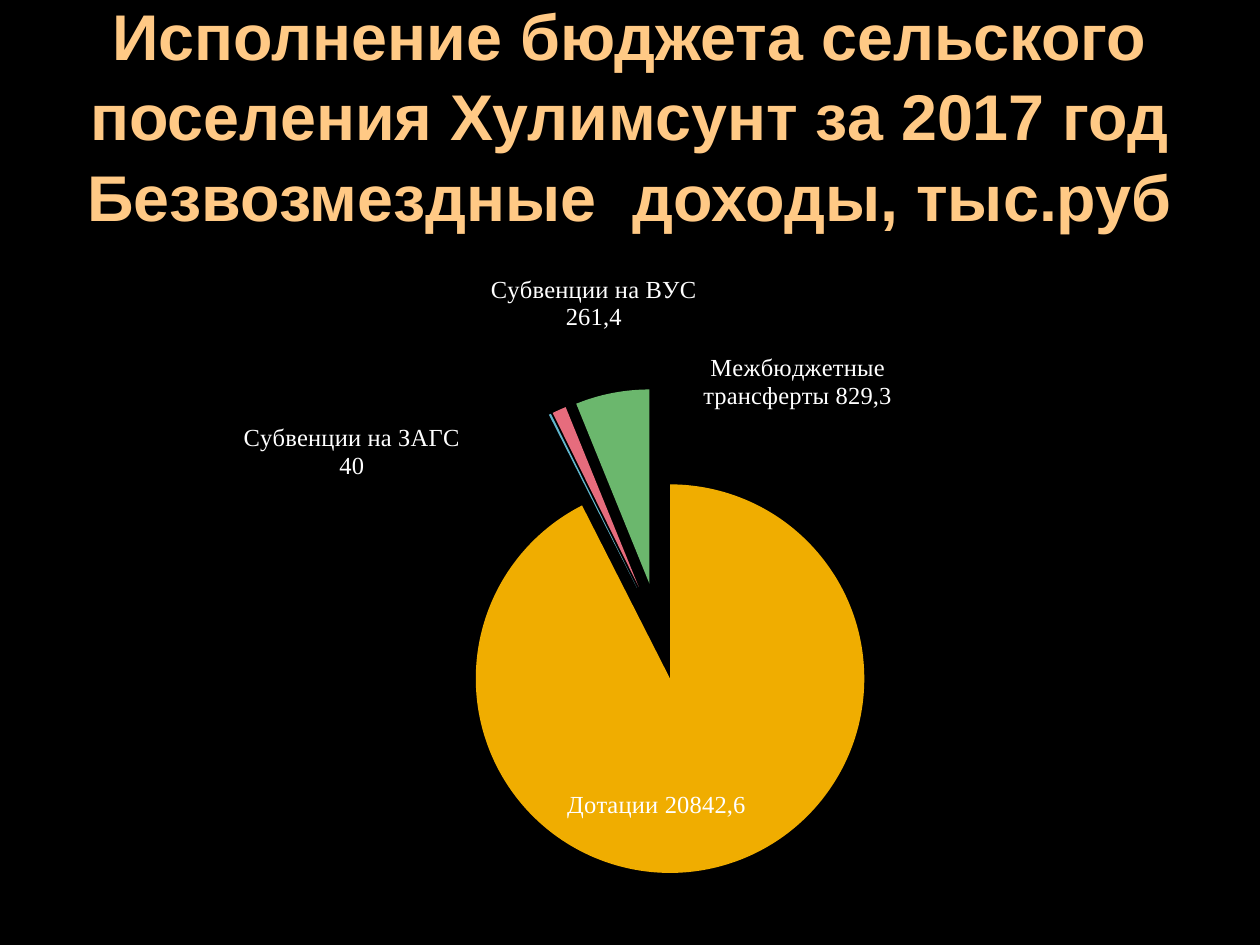
"""Build the slide on non-repayable budget income of the settlement for 2017."""
from lxml import etree
from pptx import Presentation
from pptx import util as u
from pptx.chart.data import CategoryChartData
from pptx.dml.color import RGBColor
from pptx.enum import chart as charts, text
from pptx.oxml.ns import qn

COLORS = {"background": "000000", "title": "FFC985", "label": "FFFFFF"}
TITLE = ("Исполнение бюджета сельского поселения Хулимсунт за 2017 год",
         "Безвозмездные  доходы, тыс.руб")
POSITION = charts.XL_LABEL_POSITION
INCOME = [
    ("Дотации", 20842.6, "Дотации 20842,6", "F0AD00", POSITION.INSIDE_END, (0.03, -0.07)),
    ("Субвенции на ЗАГС", 40, "Субвенции на ЗАГС 40", "60B5CC", POSITION.OUTSIDE_END, (-0.08, 0.12)),
    ("Субвенции на ВУС", 261.4, "Субвенции на ВУС 261,4", "E66C7D", POSITION.OUTSIDE_END, (0.13, -0.12)),
    ("Межбюджетные трансферты", 1384.6, "Межбюджетные трансферты 829,3", "6BB76D",
     POSITION.OUTSIDE_END, (0.26, 0.04)),
]
PLOT_LAYOUT = {"layoutTarget": "inner", "xMode": "edge", "yMode": "edge",
               "x": 0.12, "y": 0.19, "w": 0.84, "h": 0.81}


def rgb(name):
    return RGBColor.from_string(COLORS.get(name, name))


def style_font(font, face, size, color, bold=False):
    font.name, font.size, font.bold = face, u.Pt(size), bold
    font.color.rgb = rgb(color)


def insert_layout(parent, index, settings):
    for old in parent.findall(qn("c:layout")):
        parent.remove(old)
    layout = etree.Element(qn("c:layout"))
    manual = etree.SubElement(layout, qn("c:manualLayout"))
    for tag, value in settings.items():
        etree.SubElement(manual, qn(f"c:{tag}")).set("val", str(value))
    parent.insert(index, layout)


def add_title(slide):
    box = slide.shapes.add_textbox(u.Inches(0.5), u.Inches(0.3), u.Inches(9), u.Inches(1.8))
    frame = box.text_frame
    frame.word_wrap = True
    frame.vertical_anchor = text.MSO_ANCHOR.MIDDLE
    frame.margin_bottom = u.Inches(0.65)
    paragraph = frame.paragraphs[0]
    paragraph.text = "\v".join(TITLE)
    paragraph.alignment = text.PP_ALIGN.CENTER
    paragraph.line_spacing = 1.04
    for run in paragraph.runs:
        style_font(run.font, "Arial", 36.9, "title", True)


def add_income_chart(slide):
    data = CategoryChartData()
    data.categories = [row[0] for row in INCOME]
    data.add_series("Series 1", [row[1] for row in INCOME])
    chart = slide.shapes.add_chart(
        charts.XL_CHART_TYPE.PIE, u.Inches(0.59), u.Inches(2.18),
        u.Inches(8.59), u.Inches(4.76), data).chart
    chart.has_legend = chart.has_title = False
    style_font(chart.font, "Times New Roman", 18, "label")
    plot = chart.plots[0]
    plot.vary_by_categories = True
    series = plot.series[0]
    labels = series.data_labels
    labels.show_value = labels.show_category_name = True
    style_font(labels.font, "Times New Roman", 14, "label")
    for index, (_, _, caption, color, position, _) in enumerate(INCOME):
        point = series.points[index]
        point.format.fill.solid()
        point.format.fill.fore_color.rgb = rgb(color)
        point.format.line.fill.background()
        label = point.data_label
        paragraph = label.text_frame.paragraphs[0]
        paragraph.text = caption
        style_font(paragraph.runs[0].font, "Times New Roman", 14, "label")
        label.position = position

    element = series._element
    explosion = etree.Element(qn("c:explosion"))
    explosion.set("val", "25")
    element.find(qn("c:dPt")).addprevious(explosion)
    for label, row in zip(element.iter(qn("c:dLbl")), INCOME):
        insert_layout(label, 1, dict(zip("xy", row[-1])))
    for leader in element.iter(qn("c:showLeaderLines")):
        leader.set("val", "0")
    insert_layout(plot._element.getparent(), 0, PLOT_LAYOUT)


def main():
    presentation = Presentation()
    presentation.slide_width, presentation.slide_height = u.Inches(10), u.Inches(7.5)
    slide = presentation.slides.add_slide(presentation.slide_layouts[6])
    slide.background.fill.solid()
    slide.background.fill.fore_color.rgb = rgb("background")
    add_title(slide)
    add_income_chart(slide)
    presentation.save("out.pptx")


if __name__ == "__main__":
    main()
